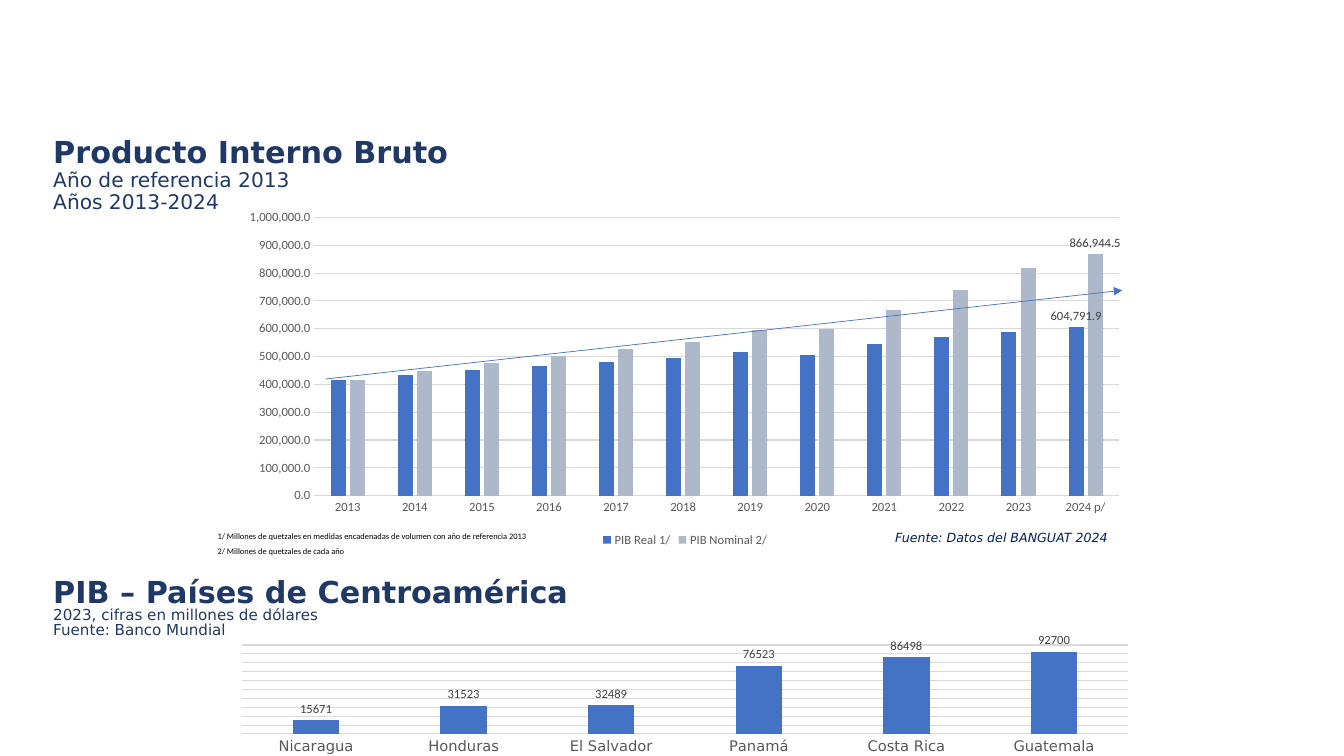
import pptx
import pptx.chart.data
import pptx.dml.color
import pptx.enum.chart
import pptx.enum.shapes
import pptx.enum.text
import pptx.oxml
import pptx.oxml.ns
import pptx.util

Inches, Pt = pptx.util.Inches, pptx.util.Pt
RGB = pptx.dml.color.RGBColor
NAVY = RGB(0x20, 0x38, 0x64)
DEEP_BLUE = RGB(0x00, 0x20, 0x60)
BLUE = RGB(0x44, 0x72, 0xC4)
BLUE_GREY = RGB(0xAD, 0xB9, 0xCA)
GRID = RGB(0xD9, 0xD9, 0xD9)
AXIS_TEXT = RGB(0x59, 0x59, 0x59)
LABEL_TEXT = RGB(0x40, 0x40, 0x40)
BLACK = RGB(0, 0, 0)
HEADING_FONT, BODY_FONT = "DejaVu Sans", "Calibri"

YEARS = [str(year) for year in range(2013, 2024)] + ["2024 p/"]
PIB_REAL = [416383.2, 434887.2, 452683.5, 464805.5, 479120.8, 495443.9,
            515350.3, 506148.4, 546808.7, 569775.5, 589870.3, 604791.9]
PIB_NOMINAL = [416383.2, 447326.3, 476022.8, 502001.7, 526507.4, 551368.1,
               593972.0, 600122.5, 668860.9, 740968.6, 818054.0, 866944.5]
PIB_BY_COUNTRY = {"Nicaragua": 15671, "Honduras": 31523, "El Salvador": 32489,
                  "Panamá": 76523, "Costa Rica": 86498, "Guatemala": 92700}


def xml(source):
    return pptx.oxml.parse_xml(source)


class GdpSlide:
    def __init__(self, slide):
        self.slide = slide

    def style(self, font, size, color, name=BODY_FONT, bold=False, italic=False):
        font.name, font.size, font.bold, font.italic = name, Pt(size), bold, italic
        font.color.rgb = color

    def text(self, box, lines, spacing=1.0, after=0, middle=False):
        """Add a text box; each line is (text, style keywords)."""
        frame = self.slide.shapes.add_textbox(*map(Inches, box)).text_frame
        frame.word_wrap = True
        if middle:
            frame.vertical_anchor = pptx.enum.text.MSO_ANCHOR.MIDDLE
        frame.text = "\n".join(words for words, _ in lines)
        for paragraph, (_, look) in zip(frame.paragraphs, lines):
            paragraph.line_spacing = spacing
            paragraph.space_after = Pt(after)
            self.style(paragraph.runs[0].font, **look)

    def heading(self, box, title, subtitles, subtitle_size, spacing):
        lines = [(title, dict(size=21.6, color=NAVY, name=HEADING_FONT, bold=True))]
        lines += [(subtitle, dict(size=subtitle_size, color=NAVY, name=HEADING_FONT))
                  for subtitle in subtitles]
        self.text(box, lines, spacing, middle=True)

    def columns(self, box, categories, series, top, step, plot_area,
                category_size, category_font, number_format):
        """Add a column chart; series are (name, values, colour)."""
        data = pptx.chart.data.CategoryChartData(number_format=number_format)
        data.categories = categories
        for name, values, _ in series:
            data.add_series(name, values)
        chart = self.slide.shapes.add_chart(
            pptx.enum.chart.XL_CHART_TYPE.COLUMN_CLUSTERED,
            *map(Inches, box), data).chart
        chart.has_title = chart.has_legend = False
        self.style(chart.font, 10, BLACK)
        plot = chart.plots[0]
        plot.gap_width, plot.overlap, plot.vary_by_categories = 219, -27, False
        for bars, (_, _, color) in zip(plot.series, series):
            bars.format.fill.solid()
            bars.format.fill.fore_color.rgb = color

        for axis in (chart.category_axis, chart.value_axis):
            axis.major_tick_mark = pptx.enum.chart.XL_TICK_MARK.NONE
            axis.minor_tick_mark = pptx.enum.chart.XL_TICK_MARK.NONE
        self.style(chart.category_axis.tick_labels.font,
                   category_size, AXIS_TEXT, category_font)
        scale = chart.value_axis
        scale.minimum_scale, scale.maximum_scale, scale.major_unit = 0, top, step
        self.style(scale.tick_labels.font, 9, AXIS_TEXT)
        scale.tick_labels.number_format = number_format
        scale.tick_labels.number_format_is_linked = False
        scale.format.line.fill.background()
        for line in (chart.category_axis.format.line, scale.major_gridlines.format.line):
            line.color.rgb = GRID
            line.width = Pt(0.75)
        self.place_plot(chart, plot_area)
        return chart

    def place_plot(self, chart, fractions):
        """Fix the inner plot area as fractions of the chart: x, y, w, h."""
        area = chart._chartSpace.chart.plotArea
        for old in area.findall(pptx.oxml.ns.qn("c:layout")):
            area.remove(old)
        sizes = "".join(f'<c:{key} val="{value}"/>'
                        for key, value in zip("xywh", fractions))
        area.insert(0, xml(
            f'<c:layout {pptx.oxml.ns.nsdecls("c")}><c:manualLayout>'
            '<c:layoutTarget val="inner"/><c:xMode val="edge"/><c:yMode val="edge"/>'
            f'{sizes}</c:manualLayout></c:layout>'))

    def legend(self, chart):
        chart.has_legend = True
        chart.legend.position = pptx.enum.chart.XL_LEGEND_POSITION.BOTTOM
        chart.legend.include_in_layout = False
        self.style(chart.legend.font, 9, AXIS_TEXT)

    def label(self, labels):
        self.style(labels.font, 9, LABEL_TEXT)
        labels.position = pptx.enum.chart.XL_LABEL_POSITION.OUTSIDE_END

    def arrow(self, start, end):
        trend = self.slide.shapes.add_connector(
            pptx.enum.shapes.MSO_CONNECTOR.STRAIGHT, *map(Inches, start + end))
        trend.line.color.rgb = BLUE
        trend.line.width = Pt(0.5)
        namespace = pptx.oxml.ns.nsdecls("a")
        trend.line._get_or_add_ln().append(xml(f'<a:tailEnd {namespace} type="triangle"/>'))
        trend._element.spPr.append(xml(f'<a:effectLst {namespace}/>'))


def main():
    deck = pptx.Presentation()
    deck.slide_width, deck.slide_height = Inches(13.33), Inches(7.5)
    gdp = GdpSlide(deck.slides.add_slide(deck.slide_layouts[6]))

    gdp.heading((0.43, 1.41, 11.5, 0.67), "Producto Interno Bruto",
                ["Año de referencia 2013", "Años 2013-2024"], 14.4, 0.9)
    gdp.text((8.78, 5.2, 6.3, 0.25),
             [("Fuente: Datos del BANGUAT 2024",
               dict(size=9, color=DEEP_BLUE, name=HEADING_FONT, italic=True))], 1.07, 8)

    yearly = gdp.columns(
        (2.31, 2.02, 8.97, 3.45), YEARS,
        [("PIB Real 1/", PIB_REAL, BLUE), ("PIB Nominal 2/", PIB_NOMINAL, BLUE_GREY)],
        1000000, 100000, (0.09, 0.04, 0.89, 0.8), 9, BODY_FONT, "#,##0.0")
    gdp.legend(yearly)
    for bars in yearly.plots[0].series:
        gdp.label(bars.points[len(YEARS) - 1].data_label)

    footnotes = ["1/ Millones de quetzales en medidas encadenadas de volumen "
                 "con año de referencia 2013",
                 "2/ Millones de quetzales de cada año"]
    for row, note in enumerate(footnotes):
        gdp.text((2.06, 5.22 + 0.15 * row, 3.32, 0.2),
                 [(note, dict(size=6, color=BLACK))])
    gdp.arrow((3.23, 3.76), (11.13, 2.88))

    countries = gdp.columns(
        (2.22, 6.28, 9.15, 1.22), list(PIB_BY_COUNTRY),
        [("Series 1", list(PIB_BY_COUNTRY.values()), BLUE)],
        100000, 10000, (0.02, 0.09, 0.96, 0.73), 10.5, HEADING_FONT, "General")
    countries.value_axis.visible = False
    country_labels = countries.plots[0].series[0].data_labels
    country_labels.show_value = True
    gdp.label(country_labels)

    gdp.heading((0.43, 5.68, 11.5, 0.73), "PIB – Países de Centroamérica",
                ["2023, cifras en millones de dólares", "Fuente: Banco Mundial"], 10.8, 0.8)
    deck.save("out.pptx")


if __name__ == "__main__":
    main()
